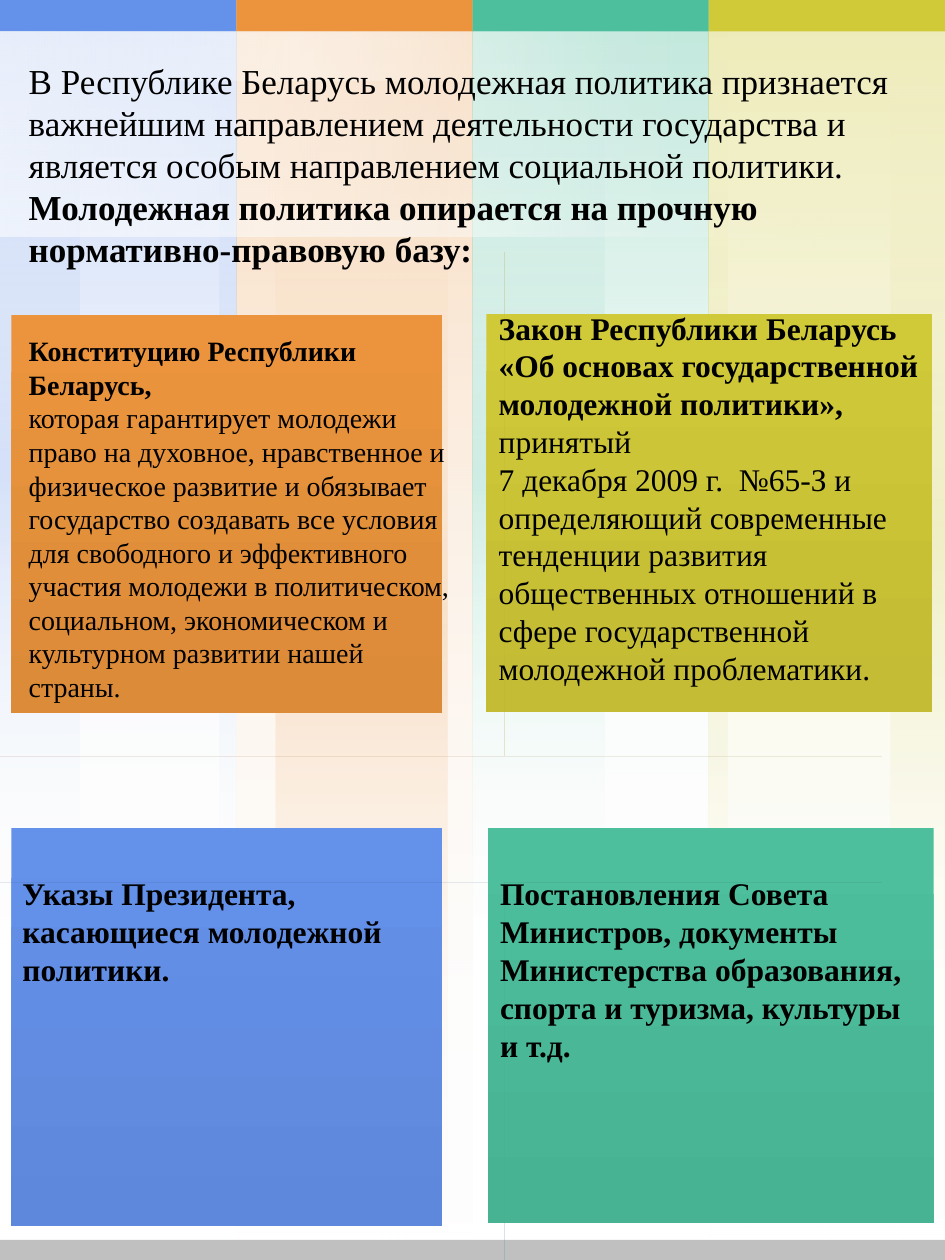
import pptx
import pptx.dml.color
import pptx.enum.shapes
import pptx.enum.text
import pptx.oxml
import pptx.oxml.ns
import pptx.util
from pptx.util import Inches

RGBColor = pptx.dml.color.RGBColor
BLUE = RGBColor(0x64, 0x91, 0xEA)
ORANGE = RGBColor(0xEB, 0x94, 0x3D)
GREEN = RGBColor(0x4D, 0xBF, 0x9C)
YELLOW = RGBColor(0xD0, 0xC9, 0x38)
WHITE = RGBColor(0xFF, 0xFF, 0xFF)
GRAY = RGBColor(0xC0, 0xC0, 0xC0)
BLACK = RGBColor(0, 0, 0)

FONT = "Times New Roman"
COLUMN_WIDTH = 7.5 / 4
DEPTH = 0.06
SLANT = 0.21
CARD_END_SHADE = 0.937
SIDE_SHADE = 0.86
EDGE_SHADE = 0.6

COLUMN_COLORS = [BLUE, ORANGE, GREEN, YELLOW]
# 0
STRIPES = [
    (1, 10, [(0, COLUMN_WIDTH, 10, False), (0.31, 1.37, 10, True)]),
    (2, 7.49, [(0, COLUMN_WIDTH, 7.49, False), (0, 1.05, 7.49, True)]),
    (3, 9.96, [(0, 0.15, 8.5, True), (0, COLUMN_WIDTH, 9.96, False), (1.44, 0.44, 8.5, True)]),
    (0, 7.49, [(0, COLUMN_WIDTH, 7.49, False), (1.74, 0.13, 7.49, True), (0, 0.63, 7.49, True)]),
]
GLOWS = [
    (3.09, -1.34, 0.13, 6.31, True),
    (2, -1.75, 1.63, 5.63, False),
    (2.21, -1.95, 0.38, 4.8, True),
    (2, -1.75, 1.63, 5.63, False),
]
CARDS = [
    (ORANGE, (0.09, 2.5, 3.42, 3.16), 1, 1),
    (YELLOW, (3.86, 2.49, 3.54, 3.16), -1, 1),
    (BLUE, (0.09, 6.57, 3.42, 3.16), 1, -1),
    (GREEN, (3.87, 6.57, 3.54, 3.14), -1, -1),
]
TITLE = [[
    ("В Республике Беларусь молодежная политика признается важнейшим направлением "
     "деятельности государства и является особым направлением социальной политики. \n", False),
    ("Молодежная политика опирается на прочную нормативно-правовую базу:", True),
]]
CARD_TEXTS = [
    ((0.08, 6.89, 3.37, 1.35), 18,
     [[("Указы Президента, касающиеся молодежной политики.", True)]]),
    ((0.13, 2.6, 3.56, 3.06), 16, [
        [("Конституцию Республики Беларусь,", True)],
        [("которая гарантирует молодежи право на духовное, нравственное и физическое развитие "
          "и обязывает государство создавать все условия для свободного и эффективного участия "
          "молодежи в политическом, социальном, экономическом и культурном развитии нашей "
          "страны.", False)],
    ]),
    ((3.86, 2.4, 3.54, 3.43), 18, [
        [("Закон Республики Беларусь", True)],
        [("«Об основах государственной молодежной политики», ", True), ("принятый", False)],
        [("7 декабря 2009 г.  №65-З и определяющий современные тенденции развития общественных "
          "отношений в сфере государственной молодежной проблематики.", False)],
    ]),
    ((3.87, 6.89, 3.52, 1.92), 18,
     [[("Постановления Совета Министров, документы Министерства образования, спорта и туризма, "
        "культуры и т.д.", True)]]),
]


def shade(color, factor):
    return RGBColor(*(round(channel * factor) for channel in color))


def fill_gradient(shape, stops):
    stop_xml = "".join(
        f'<a:gs pos="{position * 1000}"><a:srgbClr val="{color}">'
        f'<a:alpha val="{opacity * 1000}"/></a:srgbClr></a:gs>'
        for position, color, opacity in stops)
    gradient = pptx.oxml.parse_xml(
        f'<a:gradFill {pptx.oxml.ns.nsdecls("a")} rotWithShape="1"><a:gsLst>{stop_xml}</a:gsLst>'
        '<a:lin ang="5400000" scaled="0"/></a:gradFill>')
    shape.fill.background()
    empty_fill = shape._element.spPr.find(pptx.oxml.ns.qn("a:noFill"))
    shape._element.spPr.replace(empty_fill, gradient)


def fade_stops(color, opacity, peaked):
    if peaked:
        return [(0, WHITE, 0), (50, color, opacity), (100, WHITE, 0)]
    return [(0, color, opacity), (100, WHITE, 0)]


def add_rectangle(slide, box, color=None, stops=None, rotation=0):
    shape = slide.shapes.add_shape(
        pptx.enum.shapes.MSO_SHAPE.RECTANGLE, *(Inches(length) for length in box))
    shape.shadow.inherit = False
    shape.line.fill.background()
    shape.rotation = rotation
    if stops:
        fill_gradient(shape, stops)
    else:
        shape.fill.solid()
        shape.fill.fore_color.rgb = color


def add_polygon(slide, points, color):
    builder = slide.shapes.build_freeform(*points[0], scale=Inches(1))
    builder.add_line_segments(points[1:], close=True)
    shape = builder.convert_to_shape()
    shape.shadow.inherit = False
    shape.line.fill.background()
    shape.fill.solid()
    shape.fill.fore_color.rgb = color


def add_card(slide, color, box, side, edge):
    left, top, width, height = box
    near_x, far_x = (left + width, left) if side > 0 else (left, left + width)
    near_y, far_y = (top + height, top) if edge > 0 else (top, top + height)
    corner = (near_x, near_y)
    outer = (near_x + side * DEPTH, near_y + edge * DEPTH)
    add_rectangle(slide, box, stops=[(0, color, 100), (100, shade(color, CARD_END_SHADE), 100)])
    add_polygon(slide, [corner, (near_x, far_y), (outer[0], far_y + edge * SLANT), outer],
                shade(color, SIDE_SHADE))
    add_polygon(slide, [corner, (far_x, near_y), (far_x + side * SLANT, outer[1]), outer],
                shade(color, EDGE_SHADE))


def add_text(slide, box, paragraphs, size, color=BLACK, margin_top=0.05):
    frame = slide.shapes.add_textbox(*(Inches(length) for length in box)).text_frame
    frame.word_wrap = True
    frame.vertical_anchor = pptx.enum.text.MSO_ANCHOR.TOP
    frame.margin_top = Inches(margin_top)
    for index, runs in enumerate(paragraphs):
        paragraph = frame.add_paragraph() if index else frame.paragraphs[0]
        for text, bold in runs:
            run = paragraph.add_run()
            run.text = text.rstrip("\n")
            run.font.name = FONT
            run.font.size = pptx.util.Pt(size)
            run.font.bold = bold
            run.font.color.rgb = color
            if text.endswith("\n"):
                paragraph.add_line_break()


def main():
    presentation = pptx.Presentation()
    presentation.slide_width = Inches(7.5)
    presentation.slide_height = Inches(10)
    slide = presentation.slides.add_slide(presentation.slide_layouts[6])

    for column, full_height, bands in STRIPES:
        full_band = (0, COLUMN_WIDTH, full_height, False)
        for offset, width, height, peaked in bands + [full_band]:
            add_rectangle(slide, (column * COLUMN_WIDTH + offset, 0, width, height),
                          stops=fade_stops(COLUMN_COLORS[column], 20, peaked))
    for column, color in enumerate(COLUMN_COLORS):
        add_rectangle(slide, (column * COLUMN_WIDTH, 0, COLUMN_WIDTH, 0.25), color)
    for *box, peaked in GLOWS:
        add_rectangle(slide, box, stops=fade_stops(WHITE, 35, peaked), rotation=270)
    add_rectangle(slide, (0, 9.84, 7.5, 0.16), GRAY)

    add_text(slide, (0.13, 0.47, 7.27, 1.92), TITLE, 20, margin_top=0)
    for card in CARDS:
        add_card(slide, *card)
    for box, size, paragraphs in CARD_TEXTS:
        add_text(slide, box, paragraphs, size)

    presentation.save("out.pptx")


if __name__ == "__main__":
    main()
